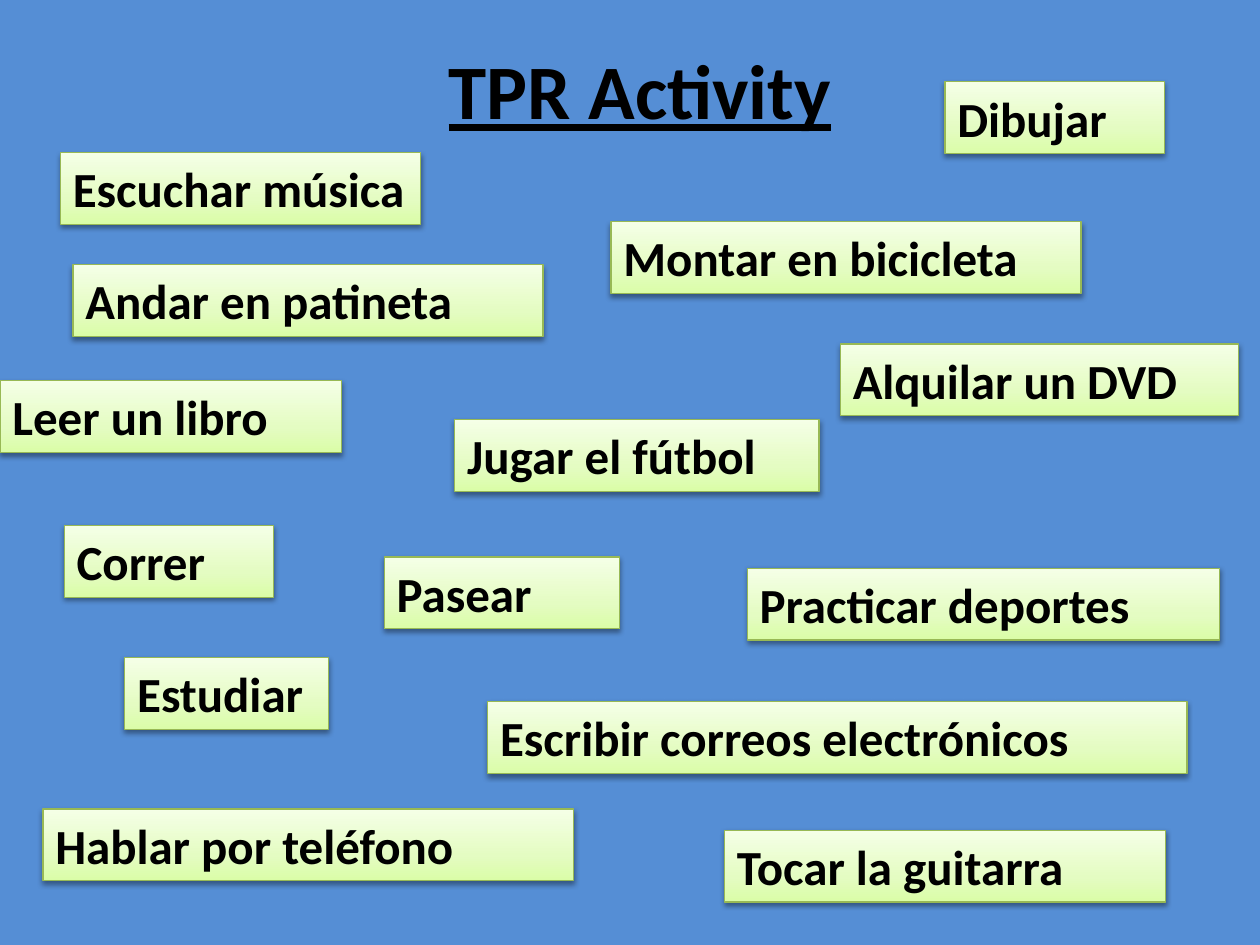
import copy

import pptx
import pptx.dml.color
import pptx.enum.shapes
import pptx.enum.text
import pptx.oxml
import pptx.oxml.ns
import pptx.util

Inches = pptx.util.Inches
Pt = pptx.util.Pt
RGBColor = pptx.dml.color.RGBColor
qn = pptx.oxml.ns.qn

COLORS = {
    "background": "558ED5",
    "text": "000000",
    "border": "98B955",
    "bottom": "DAFDA7",
    "middle": "E4FCC2",
    "top": "F5FFE7",
}
GRADIENT = [(0, "bottom"), (0.35, "middle"), (1, "top")]
LABEL_HEIGHT = 0.57
SHADOW = (
    f'<a:outerShdw {pptx.oxml.ns.nsdecls("a")} blurRad="{Pt(3.1)}" dist="{Pt(1.6)}" '
    'dir="5400000" rotWithShape="0"><a:srgbClr val="000000">'
    '<a:alpha val="38000"/></a:srgbClr></a:outerShdw>'
)
TITLE_FONT = {"name": "Calibri", "size": Pt(44), "bold": True, "underline": True}
LABEL_FONT = {"name": "Calibri", "size": Pt(28), "bold": True}

# Activity, left, top, width
ACTIVITIES = [
    ("Andar en patineta", 0.58, 2.1, 3.73),
    ("Jugar el fútbol", 3.61, 3.33, 2.89),
    ("Montar en bicicleta", 4.85, 1.76, 3.73),
    ("Correr", 0.51, 4.17, 1.66),
    ("Pasear", 3.05, 4.42, 1.87),
    ("Practicar deportes", 5.93, 4.51, 3.75),
    ("Estudiar", 0.99, 5.22, 1.62),
    ("Escribir correos electrónicos", 3.87, 5.57, 5.55),
    ("Dibujar", 7.5, 0.65, 1.74),
    ("Tocar la guitarra", 5.75, 6.59, 3.5),
    ("Leer un libro", 0, 3.02, 2.71),
    ("Escuchar música", 0.48, 1.21, 2.86),
    ("Alquilar un DVD", 6.67, 2.73, 3.16),
    ("Hablar por teléfono", 0.34, 6.42, 4.21),
]


def color(name):
    return RGBColor.from_string(COLORS[name])


def write(frame, text, align, font_format):
    frame.word_wrap = True
    paragraph = frame.paragraphs[0]
    paragraph.alignment = align
    run = paragraph.add_run()
    run.text = text
    for attribute, value in font_format.items():
        setattr(run.font, attribute, value)
    run.font.color.rgb = color("text")


# Slide and background
deck = pptx.Presentation()
deck.slide_width, deck.slide_height = Inches(10), Inches(7.5)
slide = deck.slides.add_slide(deck.slide_layouts[6])
slide.background.fill.solid()
slide.background.fill.fore_color.rgb = color("background")

# Title
title = slide.shapes.add_textbox(Inches(0.58), Inches(0.08), Inches(9), Inches(1.25))
title.text_frame.vertical_anchor = pptx.enum.text.MSO_ANCHOR.MIDDLE
write(title.text_frame, "TPR Activity", pptx.enum.text.PP_ALIGN.CENTER, TITLE_FONT)

# Activity labels
for activity, left, top, width in ACTIVITIES:
    label = slide.shapes.add_shape(
        pptx.enum.shapes.MSO_SHAPE.RECTANGLE,
        Inches(left), Inches(top), Inches(width), Inches(LABEL_HEIGHT),
    )
    label.line.color.rgb = color("border")
    label.line.width = Pt(0.75)

    # Three-stop gradient, running upwards
    label.fill.gradient()
    label.fill.gradient_angle = 90
    properties = label._element.spPr
    stop_list = properties.find(".//" + qn("a:gsLst"))
    stop_list.insert(1, copy.deepcopy(stop_list[0]))
    for stop, (position, name) in zip(label.fill.gradient_stops, GRADIENT):
        stop.position = position
        stop.color.rgb = color(name)

    # Soft shadow below
    label.shadow.inherit = False
    properties.find(qn("a:effectLst")).append(pptx.oxml.parse_xml(SHADOW))

    label.text_frame.vertical_anchor = pptx.enum.text.MSO_ANCHOR.TOP
    label.text_frame.auto_size = pptx.enum.text.MSO_AUTO_SIZE.SHAPE_TO_FIT_TEXT
    write(label.text_frame, activity, pptx.enum.text.PP_ALIGN.LEFT, LABEL_FONT)

deck.save("out.pptx")
